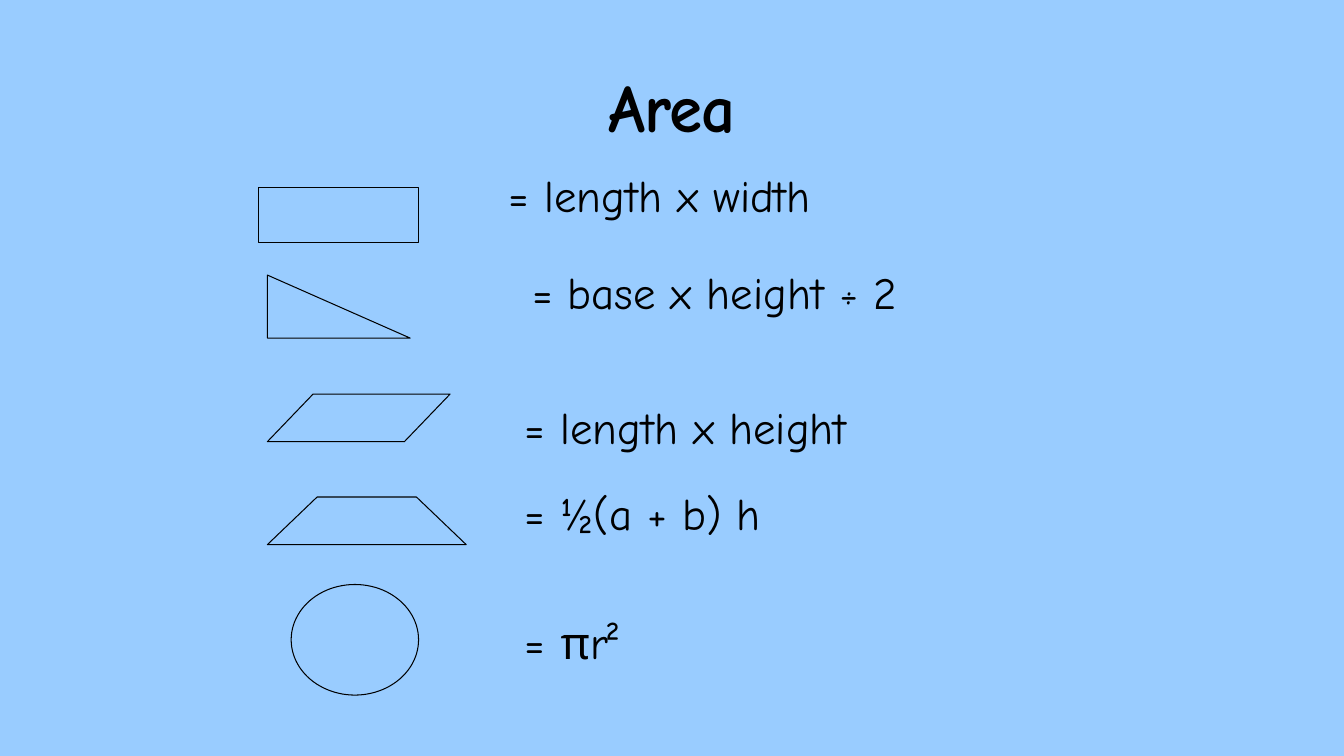
from pptx import Presentation
from pptx.dml.color import RGBColor
from pptx.enum.shapes import MSO_SHAPE as Preset
from pptx.enum.text import MSO_ANCHOR as Anchor, PP_ALIGN as Align
from pptx.util import Pt

COLORS = {"sky": "99CCFF", "ink": "000000"}
FONT = "Comic Neue"


def add_text(slide, text, box, frame_format, paragraph_format, font_format):
    shape = slide.shapes.add_textbox(*map(Pt, box))
    frame = shape.text_frame
    paragraph = frame.paragraphs[0]
    run = paragraph.add_run()
    run.text = text
    targets = ((frame, frame_format), (paragraph, paragraph_format), (run.font, font_format))
    for target, values in targets:
        for name, value in values.items():
            setattr(target, name, value)
    run.font.color.rgb = RGBColor.from_string(COLORS["ink"])
    return run


def outline(shape):
    shape.shadow.inherit = False
    shape.fill.background()
    shape.line.color.rgb = RGBColor.from_string(COLORS["ink"])
    shape.line.width = Pt(0.75)


# Slide and background
presentation = Presentation()
presentation.slide_width, presentation.slide_height = Pt(960), Pt(540)
slide = presentation.slides.add_slide(presentation.slide_layouts[6])
background = slide.background.fill
background.solid()
background.fore_color.rgb = RGBColor.from_string(COLORS["sky"])

# Title
title = add_text(
    slide, "Area", (156, 18, 648, 90),
    {"word_wrap": True, "vertical_anchor": Anchor.BOTTOM},
    {"alignment": Align.CENTER, "line_spacing": 0.85},
    {"name": FONT, "size": Pt(48), "bold": True},
)
title._r.get_or_add_rPr().set("spc", "-50")

# Formulas: text, left edge, vertical centre
formulas = [
    ("= length x width", 363.5, 139),
    ("= base x height ÷ 2", 380, 208),
    ("= length x height", 375, 304.5),
    ("= ½(a + b) h", 375, 366),
    ("= πr²", 375, 458),
]
formula_frame = {"word_wrap": True, "vertical_anchor": Anchor.MIDDLE}
formula_frame.update({f"margin_{side}": 0 for side in ("left", "top", "right", "bottom")})
for text, left, centre in formulas:
    add_text(
        slide, text, (left, centre - 20, 400, 40), formula_frame,
        {"alignment": Align.LEFT}, {"name": FONT, "size": Pt(32)},
    )

# Preset figures: kind, box, adjustments
figures = [
    (Preset.RECTANGLE, (185, 134, 114, 39.5), []),
    (Preset.RIGHT_TRIANGLE, (191, 196.5, 102, 45), []),
    (Preset.PARALLELOGRAM, (191, 281.5, 130.5, 34), [0.96]),
    (Preset.OVAL, (208, 417.5, 91, 79), []),
]
for kind, box, adjustments in figures:
    figure = slide.shapes.add_shape(kind, *map(Pt, box))
    for index, value in enumerate(adjustments):
        figure.adjustments[index] = value
    outline(figure)

# Trapezium
corners = [(191, 389), (226.5, 355), (297.5, 355), (333, 389)]
points = [(Pt(x), Pt(y)) for x, y in corners]
builder = slide.shapes.build_freeform(*points[0])
builder.add_line_segments(points[1:], close=True)
outline(builder.convert_to_shape())

presentation.save("out.pptx")
